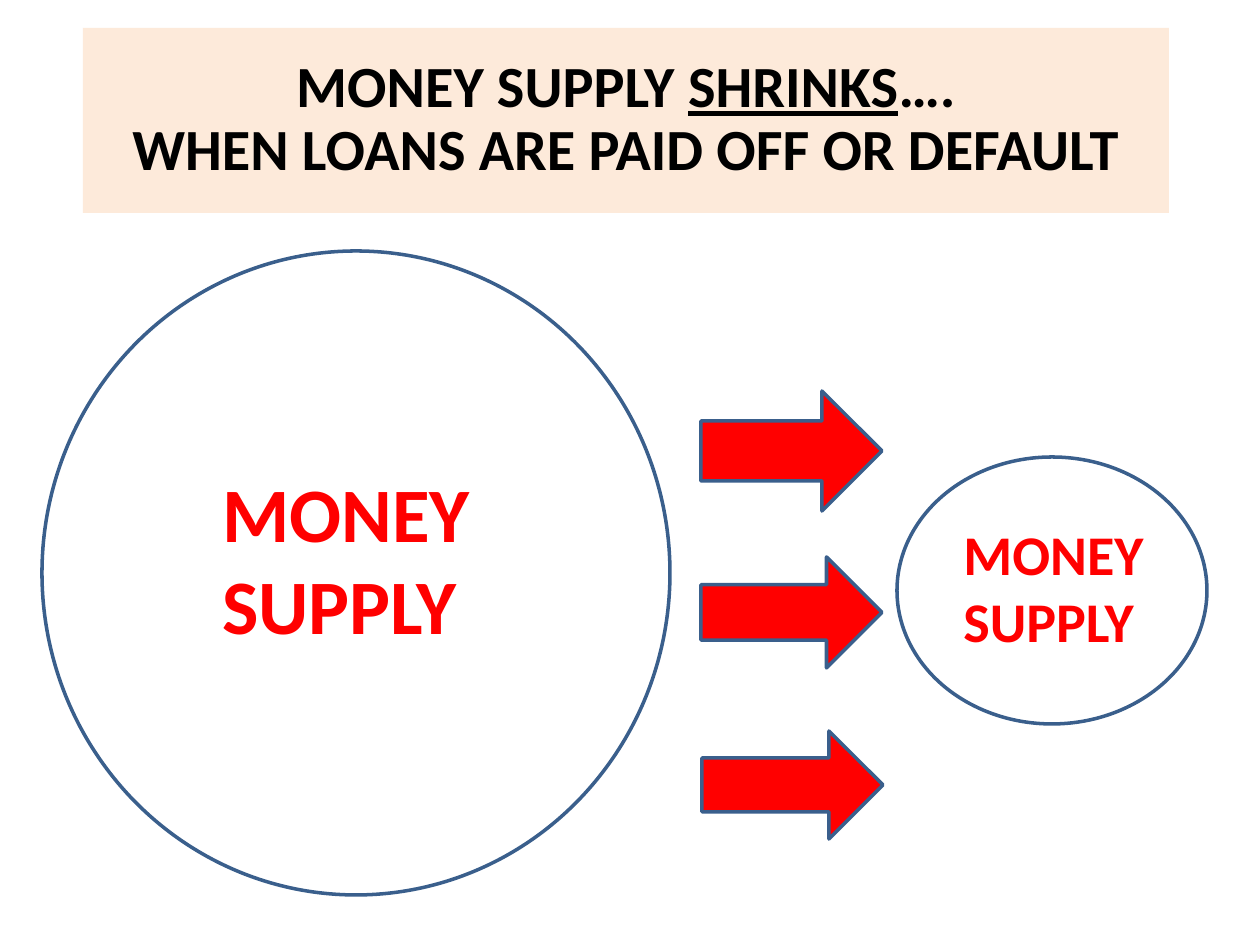
import pptx
import pptx.dml.color
import pptx.enum.shapes
import pptx.enum.text
import pptx.util

RGBColor = pptx.dml.color.RGBColor
Shape = pptx.enum.shapes.MSO_SHAPE
Align = pptx.enum.text.PP_ALIGN
Anchor = pptx.enum.text.MSO_ANCHOR

EMU_PER_PX = 914400 / 126
PEACH = RGBColor(0xFD, 0xEA, 0xDA)
BLACK = RGBColor(0x00, 0x00, 0x00)
RED = RGBColor(0xFF, 0x00, 0x00)
BLUE = RGBColor(0x3A, 0x5F, 0x8C)


def px(length):
    return pptx.util.Emu(round(length * EMU_PER_PX))


def add_shape(slide, kind, box, fill=None, line=None):
    shape = slide.shapes.add_shape(kind, *map(px, box))
    shape.shadow.inherit = False
    if fill is None:
        shape.fill.background()
    else:
        shape.fill.solid()
        shape.fill.fore_color.rgb = fill
    if line is None:
        shape.line.fill.background()
    else:
        shape.line.color.rgb = line
        shape.line.width = pptx.util.Pt(2)
    return shape


def write_text(shape, lines, *, size, color, align=Align.LEFT,
               anchor=Anchor.TOP, spacing=1.0, underlined=()):
    frame = shape.text_frame
    frame.word_wrap = True
    frame.vertical_anchor = anchor
    for index, pieces in enumerate(lines):
        paragraph = frame.add_paragraph() if index else frame.paragraphs[0]
        paragraph.alignment = align
        paragraph.line_spacing = spacing
        for piece in pieces:
            run = paragraph.add_run()
            run.text = piece
            run.font.name = "Calibri"
            run.font.size = pptx.util.Pt(size)
            run.font.bold = True
            run.font.underline = piece in underlined
            run.font.color.rgb = color


def add_title(slide):
    title = add_shape(slide, Shape.RECTANGLE, (83, 28, 1086, 185), fill=PEACH)
    lines = [
        ["MONEY SUPPLY ", "SHRINKS", "…."],
        ["WHEN LOANS ARE PAID OFF OR DEFAULT"],
    ]
    write_text(title, lines, size=33.3, color=BLACK, align=Align.CENTER,
               anchor=Anchor.MIDDLE, spacing=0.9, underlined=["SHRINKS"])


def add_money_supply(slide, circle_box, label_box, size):
    add_shape(slide, Shape.OVAL, circle_box, line=BLUE)
    label = slide.shapes.add_textbox(*map(px, label_box))
    write_text(label, [["MONEY SUPPLY"]], size=size, color=RED)


def main():
    presentation = pptx.Presentation()
    presentation.slide_width = px(1260)
    presentation.slide_height = px(945)
    slide = presentation.slides.add_slide(presentation.slide_layouts[6])

    add_title(slide)
    add_money_supply(slide, (897, 457, 310, 267), (951, 513, 302, 149), 32)
    add_money_supply(slide, (42, 251, 628, 644), (210, 459, 423, 199), 44)
    for left, top, height in [(701, 391, 120), (701, 557, 111), (702, 731, 108)]:
        add_shape(slide, Shape.RIGHT_ARROW, (left, top, 181, height),
                  fill=RED, line=BLUE)

    presentation.save("out.pptx")


if __name__ == "__main__":
    main()
